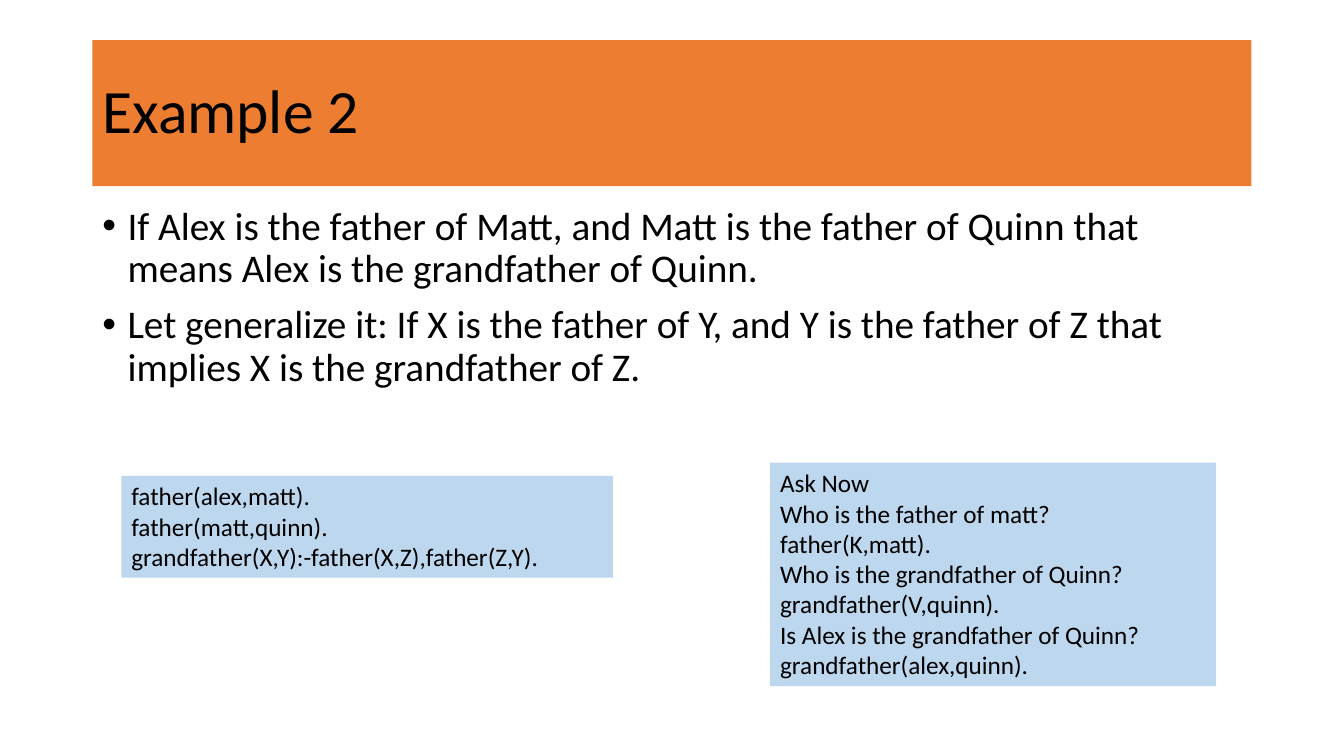
from lxml import etree
from pptx import Presentation
from pptx.dml.color import RGBColor
from pptx.enum import shapes, text
from pptx.oxml import ns
from pptx.util import Cm, Pt

ORANGE = RGBColor(0xED, 0x7D, 0x31)
PALE_BLUE = RGBColor(0xBD, 0xD7, 0xEE)
BLACK = RGBColor(0, 0, 0)

deck = Presentation()
deck.slide_width, deck.slide_height = Cm(33.87), Cm(19.05)
page = deck.slides.add_slide(deck.slide_layouts[6])


def add_box(left, top, width, height, fill=None):
    place = Cm(left), Cm(top), Cm(width), Cm(height)
    if fill is None:
        box = page.shapes.add_textbox(*place)
    else:
        box = page.shapes.add_shape(shapes.MSO_SHAPE.RECTANGLE, *place)
        box.shadow.inherit = False
        box.fill.solid()
        box.fill.fore_color.rgb = fill
        box.line.fill.background()
    box.text_frame.word_wrap = True
    box.text_frame.vertical_anchor = text.MSO_ANCHOR.TOP
    return box


def write(box, paragraphs, size):
    """Each paragraph is a list of lines."""
    frame = box.text_frame
    for index, lines in enumerate(paragraphs):
        para = frame.add_paragraph() if index else frame.paragraphs[0]
        para.alignment = text.PP_ALIGN.LEFT
        for number, line in enumerate(lines):
            if number:
                para.add_line_break()
            span = para.add_run()
            span.text = line
            span.font.name = "Calibri"
            span.font.size = Pt(size)
            span.font.color.rgb = BLACK


# Title bar
title = add_box(2.33, 1.01, 29.21, 3.68, ORANGE)
title.text_frame.vertical_anchor = text.MSO_ANCHOR.MIDDLE
write(title, [["Example 2"]], 44)
title.text_frame.paragraphs[0].line_spacing = 0.9

# Bulleted statements
body = add_box(2.33, 5.07, 29.21, 12.09)
write(body, [
    ["If Alex is the father of Matt, and Matt is the father of Quinn that "
     "means Alex is the grandfather of Quinn."],
    ["Let generalize it: If X is the father of Y, and Y is the father of Z that "
     "implies X is the grandfather of Z."],
], 28)
for para in body.text_frame.paragraphs:
    para.line_spacing = 0.9
    para.space_before = Pt(10)
    props = para._p.get_or_add_pPr()
    props.set("marL", str(Cm(0.635)))
    props.set("indent", str(-Cm(0.635)))
    etree.SubElement(props, ns.qn("a:buFont"), typeface="Arial")
    etree.SubElement(props, ns.qn("a:buChar"), char="•")

# Facts and rule
facts = add_box(3.06, 11.99, 12.39, 2.57, PALE_BLUE)
write(facts, [
    ["father(alex,matt)."],
    ["father(matt,quinn)."],
    ["grandfather(X,Y):-father(X,Z),father(Z,Y)."],
], 18)

# Questions and queries
queries = add_box(19.41, 11.66, 11.23, 5.63, PALE_BLUE)
write(queries, [
    ["Ask Now"],
    ["Who is the father of matt?", "father(K,matt)."],
    ["Who is the grandfather of Quinn?", "grandfather(V,quinn)."],
    ["Is Alex is the grandfather of Quinn?", "grandfather(alex,quinn)."],
], 18)

deck.save("out.pptx")
